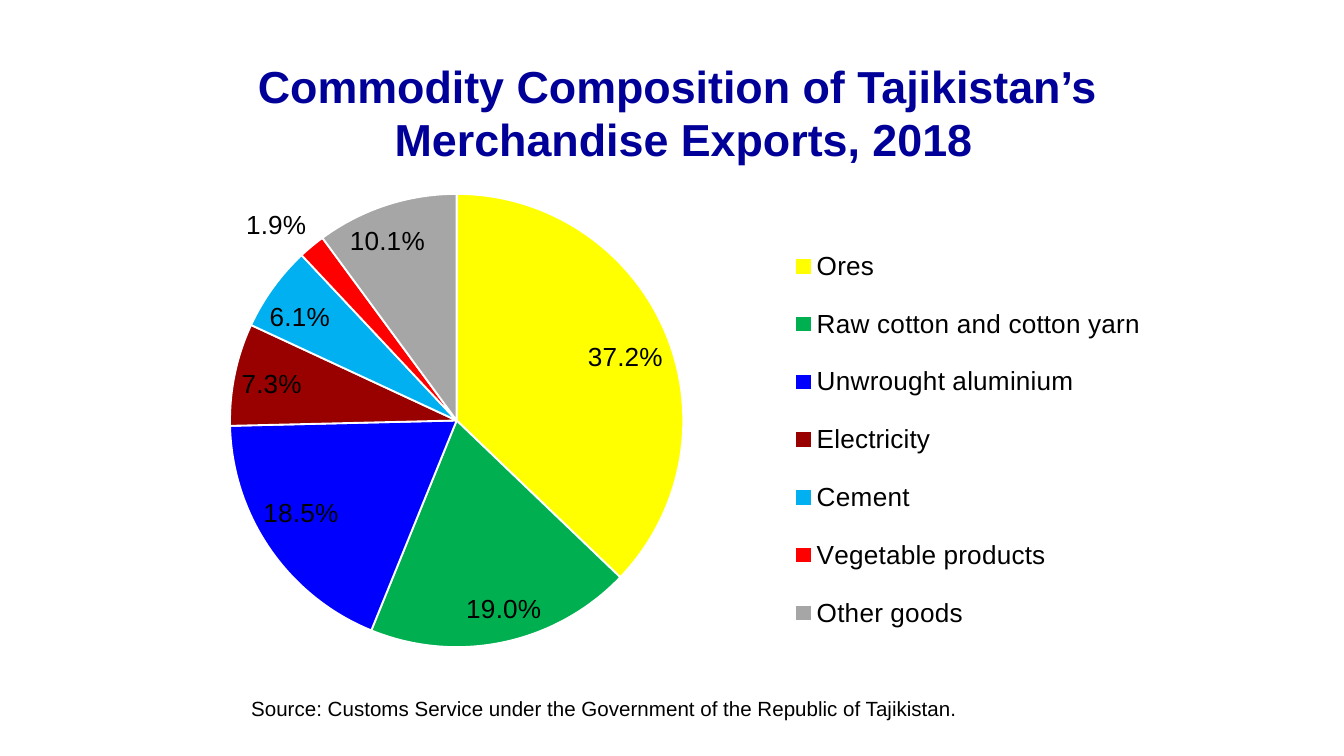
from dataclasses import dataclass

from lxml import etree
from pptx import Presentation
from pptx.chart.data import CategoryChartData
from pptx.dml.color import RGBColor
from pptx.enum.chart import XL_CHART_TYPE as ChartType
from pptx.enum.chart import XL_LABEL_POSITION as LabelPos
from pptx.enum.chart import XL_LEGEND_POSITION as LegendPos
from pptx.enum.text import MSO_ANCHOR as Anchor
from pptx.enum.text import MSO_AUTO_SIZE as AutoSize
from pptx.enum.text import PP_ALIGN as Align
from pptx.oxml.ns import qn
from pptx.util import Emu, Pt


@dataclass(frozen=True)
class Theme:
    font: str = "Arial"
    title: str = "000099"
    text: str = "000000"
    border: str = "FFFFFF"
    title_size: int = 24
    chart_size: int = 14
    source_size: int = 11


THEME = Theme()
PX_PER_INCH = 134.4

# Category, share of exports in percent, slice colour
EXPORTS = [
    ("Ores", 37.2, "FFFF00"),
    ("Raw cotton and cotton yarn", 19.0, "00B050"),
    ("Unwrought aluminium", 18.5, "0000FF"),
    ("Electricity", 7.3, "990000"),
    ("Cement", 6.1, "00B0F0"),
    ("Vegetable products", 1.9, "FF0000"),
    ("Other goods", 10.1, "A6A6A6"),
]


def px(n):
    return Emu(round(n * 914400 / PX_PER_INCH))


def rgb(value):
    return RGBColor.from_string(value)


def set_font(font, size, color, bold=False):
    font.name, font.size, font.bold = THEME.font, Pt(size), bold
    font.color.rgb = rgb(color)


def fill_text(sp, lines, size, color, bold=False, align=Align.LEFT):
    tf = sp.text_frame
    tf.word_wrap = True
    tf.auto_size = AutoSize.NONE
    tf.vertical_anchor = Anchor.MIDDLE
    tf.text = "\n".join(lines)
    for p in tf.paragraphs:
        p.alignment = align
        set_font(p.font, size, color, bold)


def add_title(slide, lines, left, top, width, height):
    sp = slide.shapes.title
    sp.left, sp.top, sp.width, sp.height = map(px, (left, top, width, height))
    fill_text(sp, lines, THEME.title_size, THEME.title, True, Align.CENTER)


def add_source(slide, text, left, top, width, height):
    sp = slide.shapes.add_textbox(*map(px, (left, top, width, height)))
    fill_text(sp, [text], THEME.source_size, THEME.text)


def make_layout(x, y, w, h, inner=False):
    """Manual layout, in fractions of the chart area."""
    layout = etree.Element(qn("c:layout"))
    manual = etree.SubElement(layout, qn("c:manualLayout"))
    settings = [("layoutTarget", "inner")] if inner else []
    settings += [("xMode", "edge"), ("yMode", "edge"),
                 ("x", x), ("y", y), ("w", w), ("h", h)]
    for tag, value in settings:
        etree.SubElement(manual, qn(f"c:{tag}")).set("val", str(value))
    return layout


def place_part(part, layout, index):
    for old in part.findall(qn("c:layout")):
        part.remove(old)
    part.insert(index, layout)


def add_pie(slide, rows, left, top, width, height):
    names, shares, colors = zip(*rows)
    data = CategoryChartData()
    data.categories = names
    data.add_series("Series 1", shares)
    frame = slide.shapes.add_chart(
        ChartType.PIE, *map(px, (left, top, width, height)), data)
    chart = frame.chart
    chart.has_title = False
    set_font(chart.font, THEME.chart_size, THEME.text)

    # Slices
    plot = chart.plots[0]
    plot.vary_by_categories = True
    for i, color in enumerate(colors):
        fmt = plot.series[0].points[i].format
        fmt.fill.solid()
        fmt.fill.fore_color.rgb = rgb(color)
        fmt.line.color.rgb = rgb(THEME.border)
        fmt.line.width = Pt(1)

    # Percent labels
    labels = plot.series[0].data_labels
    labels.show_value = False
    labels.show_percentage = True
    labels.number_format = "0.0%"
    labels.number_format_is_linked = False
    labels.position = LabelPos.BEST_FIT

    # Legend and plot area
    chart.has_legend = True
    legend = chart.legend
    legend.position = LegendPos.RIGHT
    legend.include_in_layout = False
    plot_area = chart.element.find(".//" + qn("c:plotArea"))
    place_part(plot_area, make_layout(0.106, 0.02, 0.414, 0.922, True), 0)
    legend_part = chart.element.find(".//" + qn("c:legend"))
    place_part(legend_part, make_layout(0.58, 0.08, 0.4, 0.88), 1)


def main():
    prs = Presentation()
    prs.slide_width, prs.slide_height = px(1344), px(756)
    slide = prs.slides.add_slide(prs.slide_layouts[5])

    # The trailing space of the first line shifts its centring
    add_title(slide, ["Commodity Composition of Tajikistan’s ",
                      "Merchandise Exports, 2018"], 146, 67, 1075, 90)
    add_source(slide, "Source: Customs Service under the Government of the "
                      "Republic of Tajikistan.", 238, 676, 1106, 65)
    add_pie(slide, EXPORTS, 114, 184, 1095, 492)

    prs.save("out.pptx")


if __name__ == "__main__":
    main()
